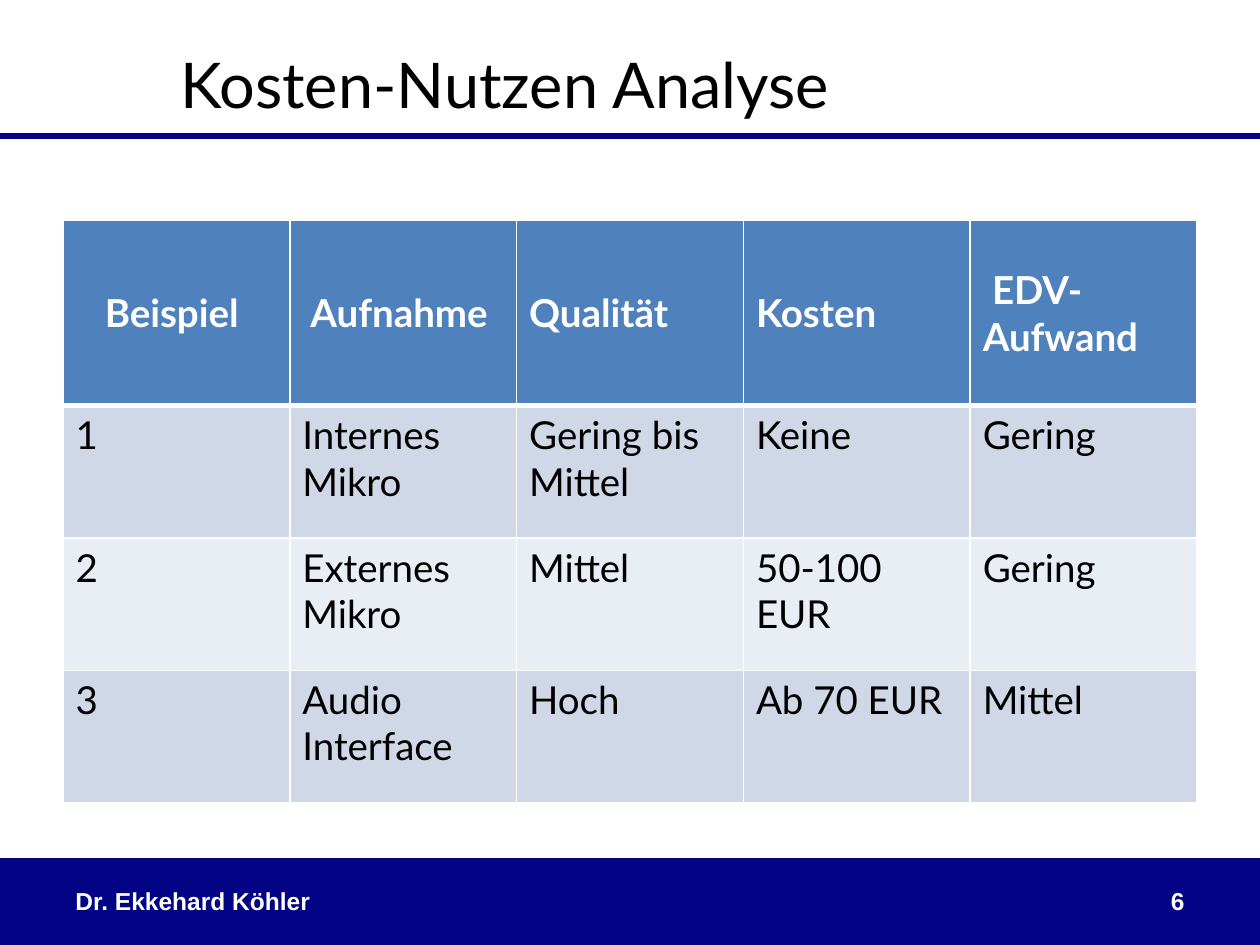
import pptx
import pptx.dml.color
import pptx.enum.shapes
import pptx.enum.text
import pptx.oxml
import pptx.oxml.ns
import pptx.util
from lxml import etree

COLORS = {"navy": "030385", "header": "4F81BD", "odd": "D0D8E8",
          "even": "E9EDF4", "white": "FFFFFF", "black": "000000"}
ALIGN = pptx.enum.text.PP_ALIGN
ANCHOR = pptx.enum.text.MSO_ANCHOR


def color(name):
    """Return the palette colour of that name."""
    return pptx.dml.color.RGBColor.from_string(COLORS[name])


class SlideBuilder:
    """Places styled elements on a slide grid of 20 columns by 15 rows."""

    columns, rows = 20, 15

    def __init__(self, deck):
        """Add a title-only page to the deck."""
        self.deck = deck
        self.page = deck.slides.add_slide(deck.slide_layouts[5])

    def place(self, left, top, width, height):
        """Convert grid units to lengths."""
        across = self.deck.slide_width / self.columns
        down = self.deck.slide_height / self.rows
        return [round(share * unit) for share, unit in
                zip((left, top, width, height), (across, down, across, down))]

    def span(self, para, text, size, font, ink, bold=False):
        """Add one formatted run to a paragraph."""
        span = para.add_run()
        span.text = text
        span.font.size = pptx.util.Pt(size)
        span.font.name = font
        span.font.bold = bold
        span.font.color.rgb = color(ink)

    def title(self, spans, *area):
        """Move the title placeholder and fill it with sized runs."""
        box = self.page.shapes.title
        box.left, box.top, box.width, box.height = self.place(*area)
        frame = box.text_frame
        frame.word_wrap = True
        frame.auto_size = pptx.enum.text.MSO_AUTO_SIZE.SHAPE_TO_FIT_TEXT
        frame.vertical_anchor = ANCHOR.TOP
        para = frame.paragraphs[0]
        para.alignment = ALIGN.LEFT
        for text, size in spans:
            self.span(para, text, size, "Lato", "black")

    def band(self, *area):
        """Add a plain navy rectangle."""
        kind = pptx.enum.shapes.MSO_SHAPE.RECTANGLE
        box = self.page.shapes.add_shape(kind, *self.place(*area))
        box.shadow.inherit = False
        box.fill.solid()
        box.fill.fore_color.rgb = color("navy")
        box.line.fill.background()

    def rule(self, top):
        """Add a navy line across the whole page."""
        left, y, width, _ = self.place(0, top, self.columns, 0)
        kind = pptx.enum.shapes.MSO_CONNECTOR.STRAIGHT
        line = self.page.shapes.add_connector(kind, left, y, width, y)
        line.line.color.rgb = color("navy")
        line.line.width = pptx.util.Pt(3)
        etree.SubElement(line._element.spPr, pptx.oxml.ns.qn("a:effectLst"))

    def footer(self, text, align, *area):
        """Add a footer text."""
        box = self.page.shapes.add_textbox(*self.place(*area))
        frame = box.text_frame
        frame.word_wrap = True
        frame.vertical_anchor = ANCHOR.MIDDLE
        para = frame.paragraphs[0]
        para.alignment = align
        self.span(para, text, 14, "Arial", "white", True)

    def borders(self, cell, widths):
        """Give a cell white borders of the given widths in points."""
        properties = cell._tc.get_or_add_tcPr()
        for side, width in widths.items():
            properties.append(pptx.oxml.parse_xml(
                f'<a:ln{side} {pptx.oxml.ns.nsdecls("a")} w="{pptx.util.Pt(width)}">'
                f'<a:solidFill><a:srgbClr val="{COLORS["white"]}"/></a:solidFill>'
                f'</a:ln{side}>'))

    def table(self, records, heights, *area):
        """Add a banded table with a header row and equal columns."""
        count = len(records[0])
        table = self.page.shapes.add_table(
            len(records), count, *self.place(*area)).table
        table.first_row = table.horz_banding = False
        for column in table.columns:
            column.width = self.place(0, 0, area[2] / count, 0)[2]
        for r, record in enumerate(records):
            table.rows[r].height = self.place(0, 0, 0, heights[r])[3]
            header = r == 0
            fill = "header" if header else "odd" if r % 2 else "even"
            for c, text in enumerate(record):
                cell = table.cell(r, c)
                self.borders(cell, {"L": 1, "R": 1, "T": 3 if r == 1 else 1,
                                    "B": 3 if header else 1})
                cell.fill.solid()
                cell.fill.fore_color.rgb = color(fill)
                cell.vertical_anchor = ANCHOR.MIDDLE if header else ANCHOR.TOP
                para = cell.text_frame.paragraphs[0]
                para.alignment = ALIGN.CENTER if header and c == 0 else ALIGN.LEFT
                self.span(para, text, 22, "Lato",
                          "white" if header else "black", header)


def main():
    """Build the cost-benefit slide."""
    deck = pptx.Presentation()
    deck.slide_width = pptx.util.Inches(10)
    deck.slide_height = pptx.util.Inches(7.5)
    slide = SlideBuilder(deck)
    slide.band(0, 13.62, 20, 1.38)
    slide.rule(2.16)
    slide.footer("Dr. Ekkehard Köhler", ALIGN.LEFT, 1, 13.9, 12.16, 0.8)
    slide.footer("6", ALIGN.RIGHT, 14.34, 13.9, 4.66, 0.8)
    records = [
        ("Beispiel ", " Aufnahme", "Qualität", "Kosten", " EDV- Aufwand"),
        ("1", "Internes Mikro", "Gering bis Mittel", "Keine", "Gering"),
        ("2", "Externes Mikro", "Mittel", "50-100 EUR", "Gering"),
        ("3", "Audio Interface", "Hoch", "Ab 70 EUR", "Mittel"),
    ]
    slide.table(records, [2.94, 2.1, 2.1, 2.1], 1, 3.5, 18, 9.24)
    slide.title([("Kosten-Nutzen", 36), (" ", 32), ("Analyse", 36)],
                2.66, 0.62, 12.56, 1.42)
    deck.save("out.pptx")


if __name__ == "__main__":
    main()
